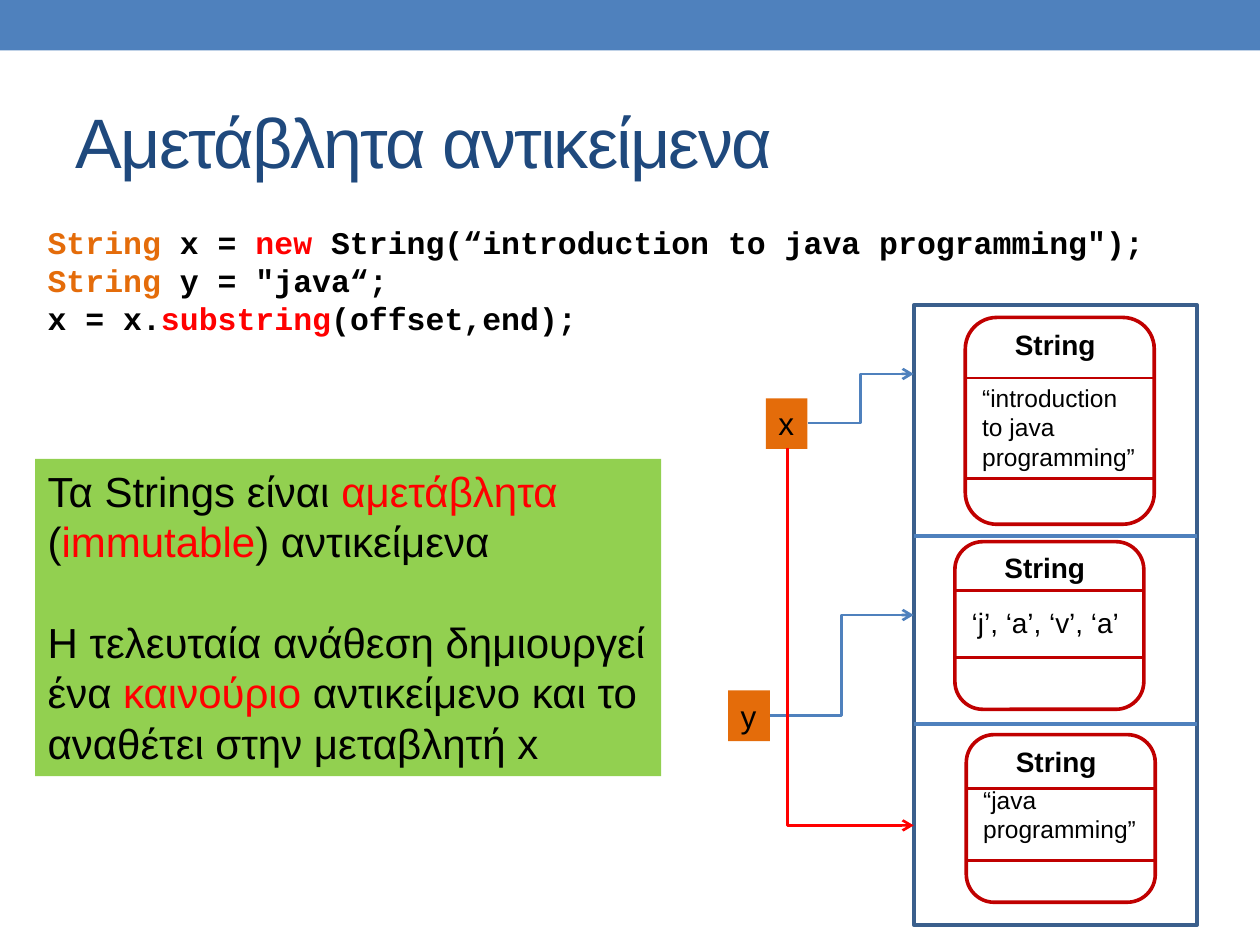
from lxml import etree
from pptx import Presentation
from pptx import util as u
from pptx.dml.color import RGBColor
from pptx.enum import shapes, text
from pptx.oxml.ns import qn

Cm, Pt = u.Cm, u.Pt
WHITE = RGBColor(0xFF, 0xFF, 0xFF)
BLACK = RGBColor(0, 0, 0)
BLUE = RGBColor(0x4F, 0x81, 0xBD)
DARK_BLUE = RGBColor(0x3A, 0x5F, 0x8C)
NAVY = RGBColor(0x1F, 0x49, 0x7D)
ORANGE = RGBColor(0xE4, 0x6C, 0x0A)
RED = RGBColor(0xFF, 0, 0)
DARK_RED = RGBColor(0xC0, 0, 0)
GREEN = RGBColor(0x92, 0xD0, 0x50)

CARD_WIDTH = 3.81
HEAP_LEFT, HEAP_RIGHT = 18.42, 24.13

CODE = [
    [("String", ORANGE), (" x = ", BLACK), ("new", RED),
     (' String(“introduction to java programming");', BLACK)],
    [("String ", ORANGE), ('y = "java“;', BLACK)],
    [("x = x.", BLACK), ("substring", RED), ("(offset,end);", BLACK)],
]
NOTE = [
    [("Τα Strings είναι ", BLACK), ("αμετάβλητα", RED), (" (", BLACK),
     ("immutable", RED), (") αντικείμενα", BLACK)],
    [("Η τελευταία ανάθεση δημιουργεί ένα ", BLACK), ("καινούριο", RED),
     (" αντικείμενο και το αναθέτει στην μεταβλητή x", BLACK)],
]


def add_title(slide, words):
    sp = slide.shapes.title
    sp.left, sp.top, sp.width, sp.height = Cm(1.27), Cm(1.47), Cm(22.86), Cm(2.74)
    tf = sp.text_frame
    tf.text = words
    tf.vertical_anchor = text.MSO_ANCHOR.MIDDLE
    tf.auto_size = text.MSO_AUTO_SIZE.NONE
    p = tf.paragraphs[0]
    p.alignment = text.PP_ALIGN.LEFT
    p.font.name, p.font.size = "Arial", Pt(40)
    p.font.color.rgb = NAVY
    p.runs[0].font._element.set("spc", "-100")


def add_box(slide, kind, left, top, width, height, fill=None, line=None):
    sp = slide.shapes.add_shape(kind, Cm(left), Cm(top), Cm(width), Cm(height))
    sp.shadow.inherit = False
    if fill is None:
        sp.fill.background()
    else:
        sp.fill.solid()
        sp.fill.fore_color.rgb = fill
    if line is None:
        sp.line.fill.background()
    else:
        sp.line.color.rgb = line
        sp.line.width = Pt(2.08)
    return sp


def add_text(slide, left, top, width, height, paragraphs, size,
             font="Arial", bold=False, fill=None, wrap=True, gap=0):
    sp = slide.shapes.add_textbox(Cm(left), Cm(top), Cm(width), Cm(height))
    if fill is not None:
        sp.fill.solid()
        sp.fill.fore_color.rgb = fill
    tf = sp.text_frame
    tf.word_wrap = wrap
    for i, runs in enumerate(paragraphs):
        p = tf.paragraphs[0] if i == 0 else tf.add_paragraph()
        p.font.name, p.font.size, p.font.bold = font, Pt(size), bold
        p.line_spacing = Pt(1.2 * size)
        if i:
            p.space_before = Pt(gap)
        for words, color in runs:
            r = p.add_run()
            r.text = words
            r.font.color.rgb = color


def add_line(slide, start, end, color, width=1.5, kind=shapes.MSO_CONNECTOR.STRAIGHT):
    line = slide.shapes.add_connector(kind, *map(Cm, start + end))
    line.line.color.rgb = color
    line.line.width = Pt(width)
    etree.SubElement(line._element.spPr, qn("a:effectLst"))
    return line


def add_elbow_arrow(slide, start, end, color):
    arrow = add_line(slide, start, end, color, kind=shapes.MSO_CONNECTOR.ELBOW)
    ln = arrow.line._get_or_add_ln()
    etree.SubElement(ln, qn("a:tailEnd"), type="arrow")
    return arrow


def add_corner_arrow(slide, start, end, color):
    arrow = add_elbow_arrow(slide, start, end, color)
    (x1, y1), (x2, y2) = start, end
    across, down = x2 - x1, y2 - y1
    arrow.left, arrow.top = Cm((x1 + x2 - down) / 2), Cm((y1 + y2 - across) / 2)
    arrow.width, arrow.height = Cm(down), Cm(across)
    spPr = arrow._element.spPr
    spPr.find(qn("a:prstGeom")).set("prst", "bentConnector2")
    xfrm = spPr.find(qn("a:xfrm"))
    xfrm.set("rot", "16200000")
    xfrm.set("flipH", "1")


def add_string_card(slide, left, top, height, rules, label_top, value, value_top,
                    value_height, size):
    add_text(slide, left + 0.75, label_top, 2.21, 0.94, [[("String", BLACK)]], 16, bold=True)
    add_text(slide, left + 0.09, value_top, 3.71, value_height, [[(value, BLACK)]], size)
    for y in rules:
        add_line(slide, (left, y), (left + CARD_WIDTH, y), DARK_RED)
    add_box(slide, shapes.MSO_SHAPE.ROUNDED_RECTANGLE, left, top, CARD_WIDTH, height,
            line=DARK_RED)


def add_variable(slide, name, left, top):
    add_text(slide, left, top, 0.84, 1.02, [[(name, BLACK)]], 18, fill=ORANGE, wrap=False)


def main():
    prs = Presentation()
    prs.slide_width, prs.slide_height = Cm(25.4), Cm(19.05)
    slide = prs.slides.add_slide(prs.slide_layouts[5])
    slide.background.fill.solid()
    slide.background.fill.fore_color.rgb = WHITE
    rect = shapes.MSO_SHAPE.RECTANGLE

    add_box(slide, rect, 0, 0, 25.4, 1.02, fill=BLUE)
    add_title(slide, "Αμετάβλητα αντικείμενα")

    add_box(slide, rect, HEAP_LEFT, 6.15, HEAP_RIGHT - HEAP_LEFT, 12.5, line=DARK_BLUE)
    for y in (10.8, 14.6):
        add_line(slide, (HEAP_LEFT, y), (HEAP_RIGHT, y), BLUE, 2.25)

    add_string_card(slide, 19.46, 6.4, 4.17, (7.62, 9.65), 6.48,
                    "“introduction to java programming”", 7.59, 2.06, 14)
    add_string_card(slide, 19.25, 10.92, 3.38, (11.91, 13.26), 10.97,
                    "‘j’, ‘a’, ‘v’, ‘a’", 12.09, 0.94, 16)
    add_string_card(slide, 19.48, 14.81, 3.38, (15.9, 17.35), 14.88,
                    "“java programming”", 15.7, 1.45, 14)

    add_variable(slide, "x", 15.44, 8.03)
    add_variable(slide, "y", 14.68, 13.92)
    add_elbow_arrow(slide, (16.28, 8.53), (HEAP_LEFT, 7.54), BLUE)
    add_elbow_arrow(slide, (15.52, 14.43), (HEAP_LEFT, 12.4), BLUE)

    add_text(slide, 0.71, 4.37, 22.73, 2.57, CODE, 18, font="Courier New", bold=True,
             wrap=False)
    add_text(slide, 0.71, 9.25, 12.62, 6.4, NOTE, 24, fill=GREEN, gap=28.8)
    add_corner_arrow(slide, (15.87, 9.04), (HEAP_LEFT, 16.64), RED)

    prs.save("out.pptx")


if __name__ == "__main__":
    main()
